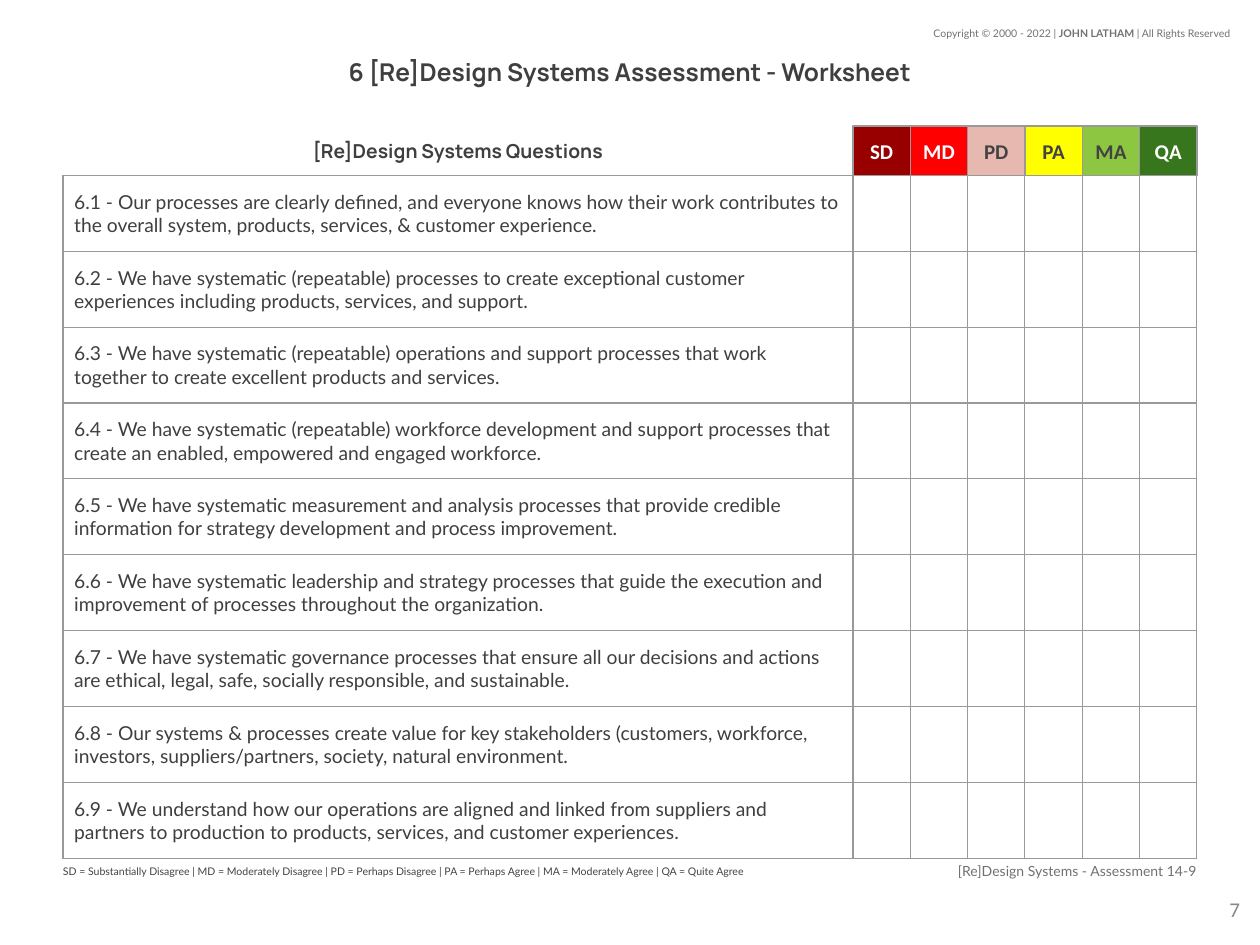
import pptx
import pptx.util
import pptx.dml.color
import pptx.enum.shapes
import pptx.enum.text
import pptx.oxml
import pptx.oxml.ns

Pt = pptx.util.Pt
RGBColor = pptx.dml.color.RGBColor
ALIGN = pptx.enum.text.PP_ALIGN
ANCHOR = pptx.enum.text.MSO_ANCHOR

WHITE = RGBColor(0xFF, 0xFF, 0xFF)
DARK = RGBColor(0x3F, 0x3F, 0x3F)
CHARCOAL = RGBColor(0x43, 0x43, 0x43)
GRAY = RGBColor(0x75, 0x70, 0x70)
PAGE_GRAY = RGBColor(0x88, 0x88, 0x88)
RULE = RGBColor(0x99, 0x99, 0x99)
MAROON = RGBColor(0x98, 0x00, 0x00)
RED = RGBColor(0xFF, 0x00, 0x00)
PINK = RGBColor(0xE6, 0xB8, 0xAF)
YELLOW = RGBColor(0xFF, 0xFF, 0x00)
LIME = RGBColor(0x8D, 0xC6, 0x40)
GREEN = RGBColor(0x38, 0x76, 0x1D)

# Worksheet grid, in points
LEFT, WIDTH = 36, 648
QUESTION_W = 451.44
RATING_W = 32.76
HEADER_TOP, HEADER_H = 72, 28.3
ROW_H = 43.35
TABLE_TOP = HEADER_TOP + HEADER_H
RATING_LEFT = LEFT + QUESTION_W
LINE_W = 0.75

RATINGS = [
    ("SD", MAROON, WHITE),
    ("MD", RED, WHITE),
    ("PD", PINK, CHARCOAL),
    ("PA", YELLOW, CHARCOAL),
    ("MA", LIME, CHARCOAL),
    ("QA", GREEN, WHITE),
]

QUESTIONS = [
    "Our processes are clearly defined, and everyone knows how their work "
    "contributes to the overall system, products, services, & customer experience.",
    "We have systematic (repeatable) processes to create exceptional customer "
    "experiences including products, services, and support.",
    "We have systematic (repeatable) operations and support processes that work "
    "together to create excellent products and services.",
    "We have systematic (repeatable) workforce development and support processes "
    "that create an enabled, empowered and engaged workforce.",
    "We have systematic measurement and analysis processes that provide credible "
    "information for strategy development and process improvement.",
    "We have systematic leadership and strategy processes that guide the execution "
    "and improvement of processes throughout the organization.",
    "We have systematic governance processes that ensure all our decisions and "
    "actions are ethical, legal, safe, socially responsible, and sustainable.",
    "Our systems & processes create value for key stakeholders (customers, "
    "workforce, investors, suppliers/partners, society, natural environment.",
    "We understand how our operations are aligned and linked from suppliers and "
    "partners to production to products, services, and customer experiences.",
]


def style(p, font, size, color, bold=None, align=ALIGN.LEFT):
    p.alignment = align
    p.font.name = font
    p.font.size = Pt(size)
    p.font.color.rgb = color
    p.font.bold = bold


def set_frame(tf, insets=(7.2, 7.2, 7.2, 7.2), anchor=ANCHOR.MIDDLE):
    tf.word_wrap = True
    tf.vertical_anchor = anchor
    tf.margin_left, tf.margin_top, tf.margin_right, tf.margin_bottom = map(Pt, insets)


def add_text(s, box, text, font, size, color, bold=None, align=ALIGN.LEFT, **frame):
    tf = s.shapes.add_textbox(*map(Pt, box)).text_frame
    set_frame(tf, **frame)
    p = tf.paragraphs[0]
    p.text = text
    style(p, font, size, color, bold, align)
    return p


def add_rating(s, index, label, fill, color):
    box = (RATING_LEFT + index * RATING_W, HEADER_TOP, RATING_W, HEADER_H)
    sp = s.shapes.add_shape(pptx.enum.shapes.MSO_SHAPE.RECTANGLE, *map(Pt, box))
    sp.shadow.inherit = False
    sp.fill.solid()
    sp.fill.fore_color.rgb = fill
    sp.line.color.rgb = RULE
    sp.line.width = Pt(LINE_W)
    set_frame(sp.text_frame)
    p = sp.text_frame.paragraphs[0]
    p.text = label
    style(p, "Calibri", 12, color, True, ALIGN.CENTER)


def set_borders(cell):
    tc_pr = cell._tc.get_or_add_tcPr()
    for i, side in enumerate(("lnL", "lnR", "lnT", "lnB")):
        tc_pr.insert(i, pptx.oxml.parse_xml(
            f'<a:{side} {pptx.oxml.ns.nsdecls("a")} w="{Pt(LINE_W)}">'
            f'<a:solidFill><a:srgbClr val="{RULE}"/></a:solidFill></a:{side}>'))


def add_questions(s):
    box = (LEFT, TABLE_TOP, WIDTH, ROW_H * len(QUESTIONS))
    table = s.shapes.add_table(len(QUESTIONS), 1 + len(RATINGS), *map(Pt, box)).table
    table.first_row = table.horz_banding = False
    for i, column in enumerate(table.columns):
        column.width = Pt(RATING_W if i else QUESTION_W)
    for number, (row, question) in enumerate(zip(table.rows, QUESTIONS), 1):
        row.height = Pt(ROW_H)
        for cell in row.cells:
            cell.fill.background()
            set_borders(cell)
            cell.vertical_anchor = ANCHOR.MIDDLE
            cell.margin_left = cell.margin_right = Pt(6.4)
            cell.margin_top = cell.margin_bottom = Pt(6.4)
        p = row.cells[0].text_frame.paragraphs[0]
        p.text = f"6.{number} - {question}"
        style(p, "Lato", 11, DARK)


def add_copyright(s):
    p = add_text(s, (524.2, 12.2, 185.8, 14.4), "Copyright © 2000 - 2022 | ",
                 "Lato", 6, GRAY, align=ALIGN.RIGHT,
                 insets=(7.2, 3.6, 7.2, 3.6), anchor=ANCHOR.TOP)
    r = p.add_run()
    r.text = "JOHN LATHAM "
    r.font.bold = True
    p.add_run().text = "| All Rights Reserved"


def main():
    prs = pptx.Presentation()
    prs.slide_width, prs.slide_height = Pt(720), Pt(540)
    s = prs.slides.add_slide(prs.slide_layouts[6])

    # Copyright line, title and page number
    add_copyright(s)
    add_text(s, (LEFT, 30.2, WIDTH, 21.6), "6 [Re]Design Systems Assessment - Worksheet",
             "Manrope", 14, DARK, True, ALIGN.CENTER)
    add_text(s, (672.5, 499, 43.2, 41), "7", "Calibri", 12, PAGE_GRAY, align=ALIGN.RIGHT)

    # Worksheet header and table
    add_text(s, (LEFT, HEADER_TOP, QUESTION_W, HEADER_H), "[Re]Design Systems Questions",
             "Manrope", 11, DARK, True, ALIGN.CENTER)
    add_questions(s)
    for i, rating in enumerate(RATINGS):
        add_rating(s, i, *rating)

    # Legend and assessment label
    add_text(s, (LEFT, 488, QUESTION_W, 20),
             "SD = Substantially Disagree | MD = Moderately Disagree | "
             "PD = Perhaps Disagree | PA = Perhaps Agree | "
             "MA = Moderately Agree | QA = Quite Agree",
             "Lato", 6, CHARCOAL, insets=(0, 7.2, 7.2, 7.2))
    add_text(s, (RATING_LEFT, 490.5, RATING_W * len(RATINGS), 14.4),
             "[Re]Design Systems - Assessment 14-9", "Lato", 8, GRAY,
             align=ALIGN.RIGHT, insets=(7.2, 7.2, 0, 7.2))

    prs.save("out.pptx")


if __name__ == "__main__":
    main()
